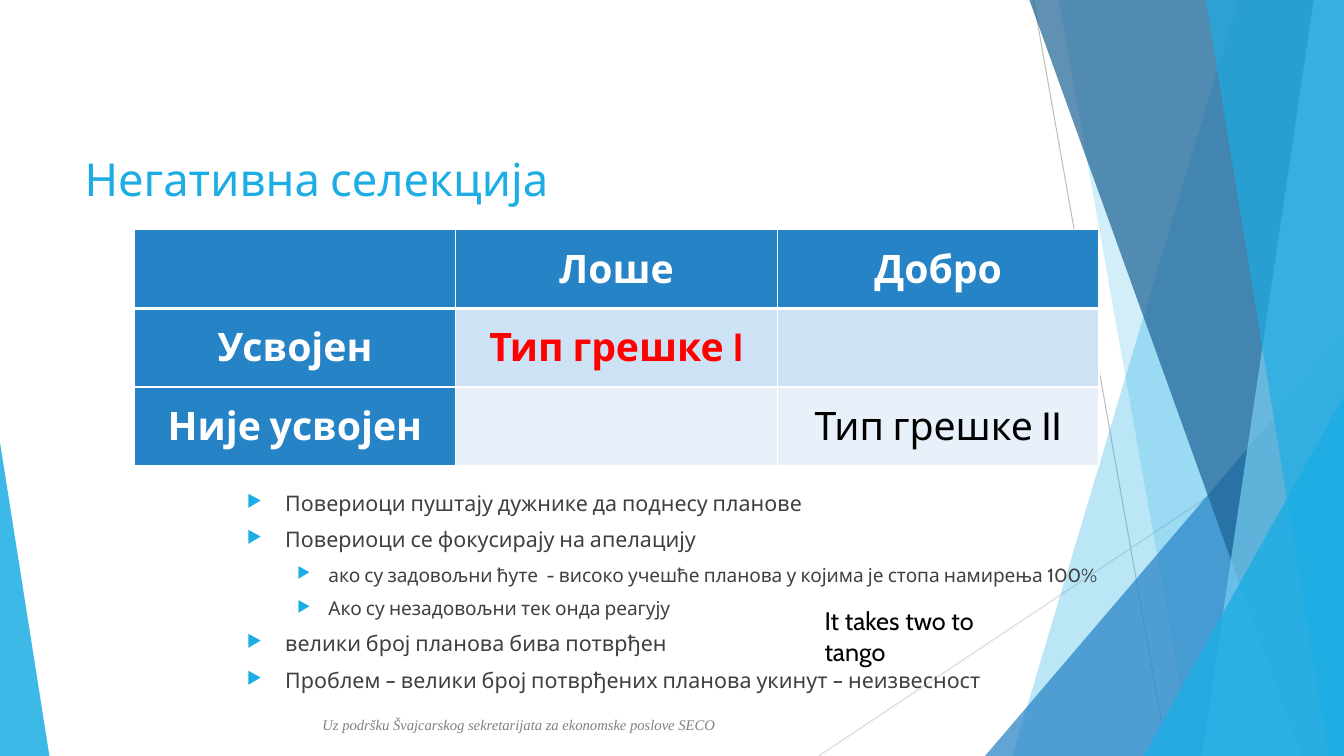
"""Builds the slide on negative selection: error-type table, bullets and faceted backdrop."""
from lxml import etree
from pptx import Presentation
from pptx.dml.color import RGBColor
from pptx.enum.shapes import MSO_CONNECTOR, MSO_SHAPE
from pptx.enum.text import MSO_ANCHOR, PP_ALIGN
from pptx.oxml.ns import qn
from pptx.util import Pt

PX = 9144
WIDTH, HEIGHT = 1333, 750
STRAIGHT = MSO_CONNECTOR.STRAIGHT
TRIANGLE = MSO_SHAPE.ISOSCELES_TRIANGLE
TOP, MIDDLE = MSO_ANCHOR.TOP, MSO_ANCHOR.MIDDLE
CENTER = PP_ALIGN.CENTER

CYAN = RGBColor(0x1C, 0xAD, 0xE4)
PALE_CYAN = RGBColor(0x77, 0xCE, 0xEF)
BLUE = RGBColor(0x26, 0x83, 0xC6)
NAVY = RGBColor(0x1D, 0x62, 0x94)
LIGHT_BAND = RGBColor(0xCD, 0xE3, 0xF5)
PALE_BAND = RGBColor(0xE8, 0xF1, 0xFA)
WHITE = RGBColor(0xFF, 0xFF, 0xFF)
BLACK = RGBColor(0, 0, 0)
RED = RGBColor(0xFF, 0, 0)
DARK_GRAY = RGBColor(0x40, 0x40, 0x40)
MID_GRAY = RGBColor(0x80, 0x80, 0x80)
RULE_GRAY = RGBColor(0xBF, 0xBF, 0xBF)
RULE_PALE = RGBColor(0xD9, 0xD9, 0xD9)

FONT = "Cabin"
TITLE = "Негативна селекција"
FOOTER = "Uz podršku Švajcarskog sekretarijata za ekonomske poslove SECO"
REMARK = "It takes two to tango"

BULLETS = [
    (0, "Повериоци пуштају дужнике да поднесу планове"),
    (0, "Повериоци се фокусирају на апелацију"),
    (1, "ако су задовољни ћуте  - високо учешће планова у којима је стопа намирења 100%"),
    (1, "Ако су незадовољни тек онда реагују"),
    (0, "велики број планова бива потврђен"),
    (0, "Проблем – велики број потврђених планова укинут – неизвесност"),
]
LEVELS = [(38, -38, 15.3), (81, -31, 13.6)]

ERROR_TYPES = [
    ["", "Лоше", "Добро"],
    ["Усвојен", "Тип грешке I", ""],
    ["Није усвојен", "", "Тип грешке II"],
]
BODY_BANDS = [LIGHT_BAND, PALE_BAND]
ERROR_STYLES = {(1, 1): (RED, True), (2, 2): (BLACK, False)}

RULES = [((1025, 0), (1158, 750), RULE_GRAY), ((1333, 403), (812, 750), RULE_PALE)]
FACETS = [
    ("band", 1228, 1004, CYAN, 30),
    ("band", 1050, 1183, CYAN, 20),
    ("triangle", (977, 333, 356, 417), 1, BLUE, 72),
    ("band", 1021, 1291, NAVY, 70),
    ("band", 1303, 1192, PALE_CYAN, 70),
    ("band", 1196, 1318, CYAN, 65),
    ("triangle", (1134, 393, 199, 357), 1, CYAN, 80),
    ("triangle", (0, 439, 49, 311), 0, CYAN, 85),
]


def emu(*lengths):
    return [length * PX for length in lengths]


def add_xml(parent, tag, **attributes):
    return etree.SubElement(parent, qn(tag), attributes)


def add_rule(shapes, start, end, color):
    rule = shapes.add_connector(STRAIGHT, *emu(*start, *end))
    rule.line.color.rgb = color
    rule.line.width = Pt(0.75)
    add_xml(rule._element.spPr, "a:effectLst")


def add_facet(shapes, kind, first, second, color, opacity):
    if kind == "band":
        outline = shapes.build_freeform(first, 0, scale=PX)
        outline.add_line_segments([(WIDTH, 0), (WIDTH, HEIGHT), (second, HEIGHT)], close=True)
        facet = outline.convert_to_shape()
    else:
        facet = shapes.add_shape(TRIANGLE, *emu(*first))
        facet.adjustments[0] = second
    facet.shadow.inherit = False
    facet.line.fill.background()
    facet.fill.solid()
    facet.fill.fore_color.rgb = color
    tint = facet._element.spPr.find(qn("a:solidFill"))[0]
    add_xml(tint, "a:alpha", val=str(opacity * 1000))


def set_font(paragraph, size, color, face=FONT, bold=False, italic=False):
    font = paragraph.font
    font.size, font.name, font.bold, font.italic = Pt(size), face, bold, italic
    font.color.rgb = color


def add_text(shapes, box, text, size, color, anchor=TOP, **style):
    frame = shapes.add_textbox(*emu(*box)).text_frame
    frame.word_wrap = True
    frame.vertical_anchor = anchor
    frame.text = text
    set_font(frame.paragraphs[0], size, color, **style)


def add_bullets(shapes, box):
    frame = shapes.add_textbox(*emu(*box)).text_frame
    frame.word_wrap = True
    for index, (level, text) in enumerate(BULLETS):
        paragraph = frame.add_paragraph() if index else frame.paragraphs[0]
        paragraph.text = text
        paragraph.level = level
        margin, indent, size = LEVELS[level]
        properties = paragraph._p.get_or_add_pPr()
        properties.set("marL", str(margin * PX))
        properties.set("indent", str(indent * PX))
        add_xml(add_xml(properties, "a:buClr"), "a:srgbClr", val=str(CYAN))
        add_xml(properties, "a:buSzPct", val="80000")
        add_xml(properties, "a:buChar", char="▶")
        paragraph.line_spacing = 0.9
        if index:
            paragraph.space_before = Pt(9.5)
        set_font(paragraph, size, DARK_GRAY)


def add_borders(cell, widths):
    properties = cell._tc.get_or_add_tcPr()
    for index, (side, points) in enumerate(widths.items()):
        border = add_xml(properties, f"a:ln{side}", w=str(Pt(points)))
        add_xml(add_xml(border, "a:solidFill"), "a:srgbClr", val=str(WHITE))
        properties.insert(index, border)


def add_error_table(shapes, left, top, column_width, row_height):
    rows, columns = len(ERROR_TYPES), len(ERROR_TYPES[0])
    size = column_width * columns, row_height * rows
    table = shapes.add_table(rows, columns, *emu(left, top, *size)).table
    table.horz_banding = False
    for column in table.columns:
        column.width = column_width * PX
    for r, labels in enumerate(ERROR_TYPES):
        table.rows[r].height = row_height * PX
        for c, label in enumerate(labels):
            cell = table.cell(r, c)
            cell.fill.solid()
            cell.fill.fore_color.rgb = BLUE if r == 0 or c == 0 else BODY_BANDS[r - 1]
            add_borders(cell, {"L": 1, "R": 1, "T": 3 if r == 1 else 1, "B": 3 if r == 0 else 1})
            cell.vertical_anchor = MIDDLE
            cell.text = label
            paragraph = cell.text_frame.paragraphs[0]
            paragraph.alignment = CENTER
            color, bold = ERROR_STYLES.get((r, c), (WHITE, True))
            set_font(paragraph, 28, color, bold=bold)


def main():
    deck = Presentation()
    deck.slide_width, deck.slide_height = emu(WIDTH, HEIGHT)
    shapes = deck.slides.add_slide(deck.slide_layouts[6]).shapes
    for rule in RULES:
        add_rule(shapes, *rule)
    for facet in FACETS:
        add_facet(shapes, *facet)
    add_text(shapes, (310, 705, 439, 28), FOOTER, 10.5, MID_GRAY, face="Times New Roman", italic=True)
    add_text(shapes, (74, 142, 940, 69), TITLE, 32.4, CYAN, anchor=MIDDLE)
    add_bullets(shapes, (235, 484, 1063, 200))
    add_error_table(shapes, 133, 228, 319, 78)
    add_text(shapes, (808, 596, 226, 40), REMARK, 18, BLACK)
    deck.save("out.pptx")


if __name__ == "__main__":
    main()
